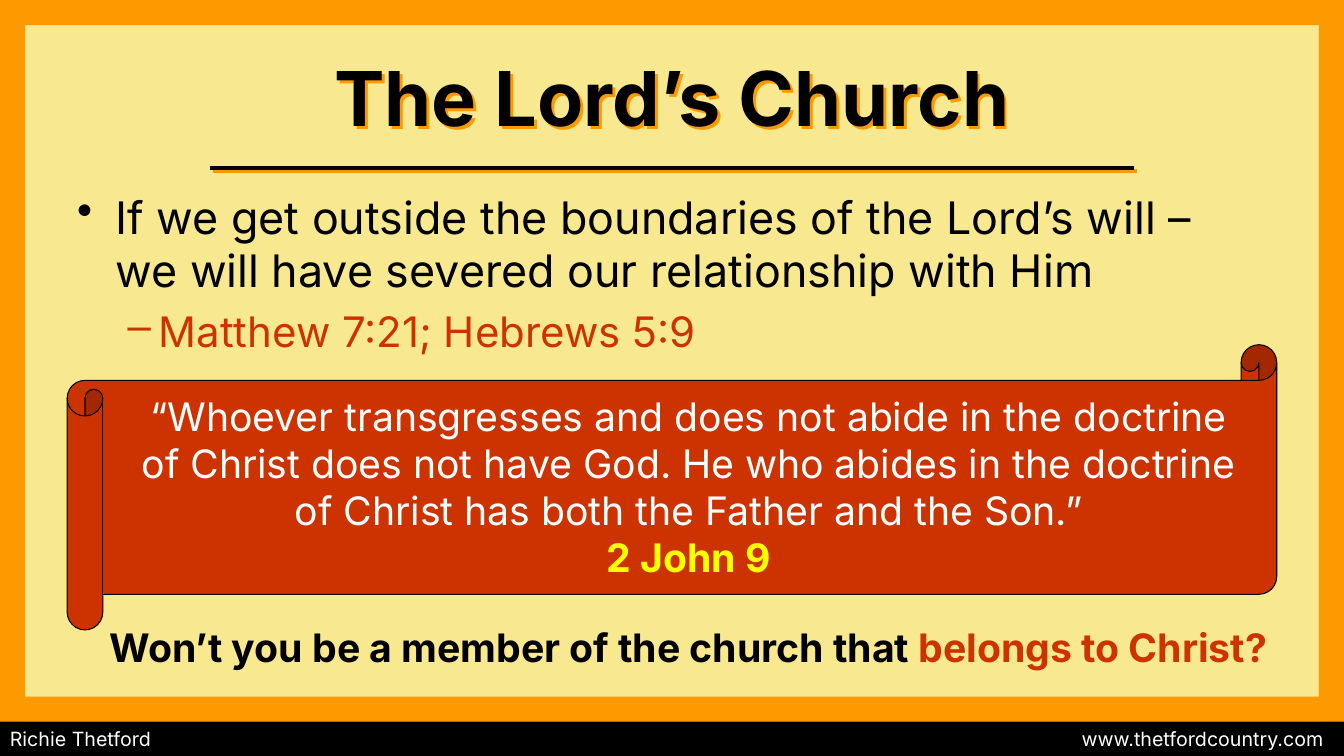
import pptx
import pptx.util
import pptx.dml.color
import pptx.enum.shapes
import pptx.enum.text
import lxml.etree
from pptx.oxml.ns import qn

Inches, Pt = pptx.util.Inches, pptx.util.Pt
RGBColor = pptx.dml.color.RGBColor
SHAPES = pptx.enum.shapes.MSO_SHAPE
ALIGN = pptx.enum.text.PP_ALIGN
ANCHOR = pptx.enum.text.MSO_ANCHOR

CREAM = RGBColor(0xF8, 0xE9, 0x90)
ORANGE = RGBColor(0xFF, 0x99, 0x00)
RED = RGBColor(0xCC, 0x33, 0x00)
YELLOW = RGBColor(0xFF, 0xFF, 0x00)
BLACK = RGBColor(0, 0, 0)
WHITE = RGBColor(0xFF, 0xFF, 0xFF)

WIDTH, HEIGHT = 13.33, 7.5
BORDER = 0.25
FOOTER = 0.34
MARGIN = WIDTH * 0.05
CONTENT = WIDTH * 0.9


def add_text(paragraph, text, size=28, color=BLACK, bold=False):
    run = paragraph.add_run()
    run.text = text
    run.font.name = "Inter"
    run.font.size = Pt(size)
    run.font.bold = bold
    run.font.color.rgb = color


def add_box(slide, box, anchor=ANCHOR.TOP):
    shape = slide.shapes.add_textbox(*map(Inches, box))
    shape.text_frame.word_wrap = True
    shape.text_frame.vertical_anchor = anchor
    return shape


def add_filled(slide, kind, box, fill):
    shape = slide.shapes.add_shape(kind, *map(Inches, box))
    shape.shadow.inherit = False
    shape.fill.solid()
    shape.fill.fore_color.rgb = fill
    shape.line.fill.background()
    return shape


def add_orange_shadow(shape):
    properties = shape._element.spPr
    effects = lxml.etree.SubElement(properties, qn("a:effectLst"))
    shadow = lxml.etree.SubElement(
        effects, qn("a:outerShdw"), dist=str(Pt(2.8)), dir="2700000",
        algn="ctr", rotWithShape="0")
    lxml.etree.SubElement(shadow, qn("a:srgbClr"), val=str(ORANGE))


def set_bullet(paragraph, character, left, hanging):
    properties = paragraph._p.get_or_add_pPr()
    properties.set("marL", str(Inches(left)))
    properties.set("indent", str(-Inches(hanging)))
    lxml.etree.SubElement(properties, qn("a:buChar"), char=character)


def draw_title(slide, box):
    left, top, width, height = box
    title = add_box(slide, box, ANCHOR.MIDDLE)
    paragraph = title.text_frame.paragraphs[0]
    paragraph.alignment = ALIGN.CENTER
    add_text(paragraph, "The Lord’s Church", size=54, bold=True)
    add_orange_shadow(title)

    # Rule under the title
    rule_top = Inches(top + height + 0.09)
    rule = slide.shapes.add_connector(
        pptx.enum.shapes.MSO_CONNECTOR.STRAIGHT,
        Inches(left + width * 0.118), rule_top,
        Inches(left + width * 0.882), rule_top)
    rule.line.color.rgb = BLACK
    rule.line.width = Pt(3)
    add_orange_shadow(rule)


def draw_points(slide, box):
    frame = add_box(slide, box).text_frame
    point = frame.paragraphs[0]
    add_text(point, "If we get outside the boundaries of the Lord’s will – "
             "we will have severed our relationship with Him", size=32)
    set_bullet(point, "•", 0.38, 0.38)
    verses = frame.add_paragraph()
    verses.level = 1
    verses.space_before = Pt(6)
    add_text(verses, "Matthew 7:21; Hebrews 5:9", size=30, color=RED)
    set_bullet(verses, "–", 0.81, 0.31)


def draw_scroll(slide, box):
    left, top, width, height = box
    scroll = add_filled(slide, SHAPES.HORIZONTAL_SCROLL, box, RED)
    scroll.adjustments[0] = 0.125
    scroll.line.color.rgb = BLACK
    scroll.line.width = Pt(0.75)

    # Quotation on the scroll
    frame = add_box(slide, (left + 0.5, top + height * 0.15,
                            width - 0.67, height * 0.7)).text_frame
    quotation, reference = frame.paragraphs[0], frame.add_paragraph()
    quotation.alignment = reference.alignment = ALIGN.CENTER
    add_text(quotation, "“Whoever transgresses and does not abide in the "
             "doctrine of Christ does not have God. He who abides in the "
             "doctrine of Christ has both the Father and the Son.”",
             color=WHITE)
    add_text(reference, "2 John 9", color=YELLOW, bold=True)


def draw_question(slide, box):
    paragraph = add_box(slide, box).text_frame.paragraphs[0]
    paragraph.alignment = ALIGN.CENTER
    add_text(paragraph, "Won’t you be a member of the church that ", bold=True)
    add_text(paragraph, "belongs to Christ?", color=RED, bold=True)


def draw_border(slide, box):
    left, top, width, height = box
    for side in (
        (left + width - BORDER, top, BORDER, height),
        (left, top, BORDER, height),
        (left, top, width, BORDER),
        (left, top + height - BORDER, width, BORDER),
    ):
        add_filled(slide, SHAPES.RECTANGLE, side, ORANGE)


def draw_footer(slide, box):
    bar = add_filled(slide, SHAPES.RECTANGLE, box, BLACK)
    bar.text_frame.vertical_anchor = ANCHOR.MIDDLE
    paragraph = bar.text_frame.paragraphs[0]
    paragraph.alignment = ALIGN.LEFT
    add_text(paragraph, "Richie Thetford\twww.thetfordcountry.com",
             size=14, color=WHITE)
    # Right tab that holds the web address
    stops = lxml.etree.SubElement(paragraph._p.get_or_add_pPr(),
                                  qn("a:tabLst"))
    lxml.etree.SubElement(stops, qn("a:tab"),
                          pos=str(Inches(box[2] - 0.3)), algn="r")


def main():
    presentation = pptx.Presentation()
    presentation.slide_width = Inches(WIDTH)
    presentation.slide_height = Inches(HEIGHT)
    slide = presentation.slides.add_slide(presentation.slide_layouts[6])
    slide.background.fill.solid()
    slide.background.fill.fore_color.rgb = CREAM

    footer_top = HEIGHT - FOOTER
    draw_points(slide, (MARGIN, 1.83, 11.42, 1.55))
    draw_scroll(slide, (MARGIN, 3.42, CONTENT, 2.83))
    draw_question(slide, (0.83, 6.13, CONTENT, 0.57))
    draw_border(slide, (0, 0, WIDTH, footer_top))
    draw_footer(slide, (0, footer_top, WIDTH, FOOTER))
    draw_title(slide, (MARGIN, 0.33, CONTENT, 1.25))
    presentation.save("out.pptx")


if __name__ == "__main__":
    main()
